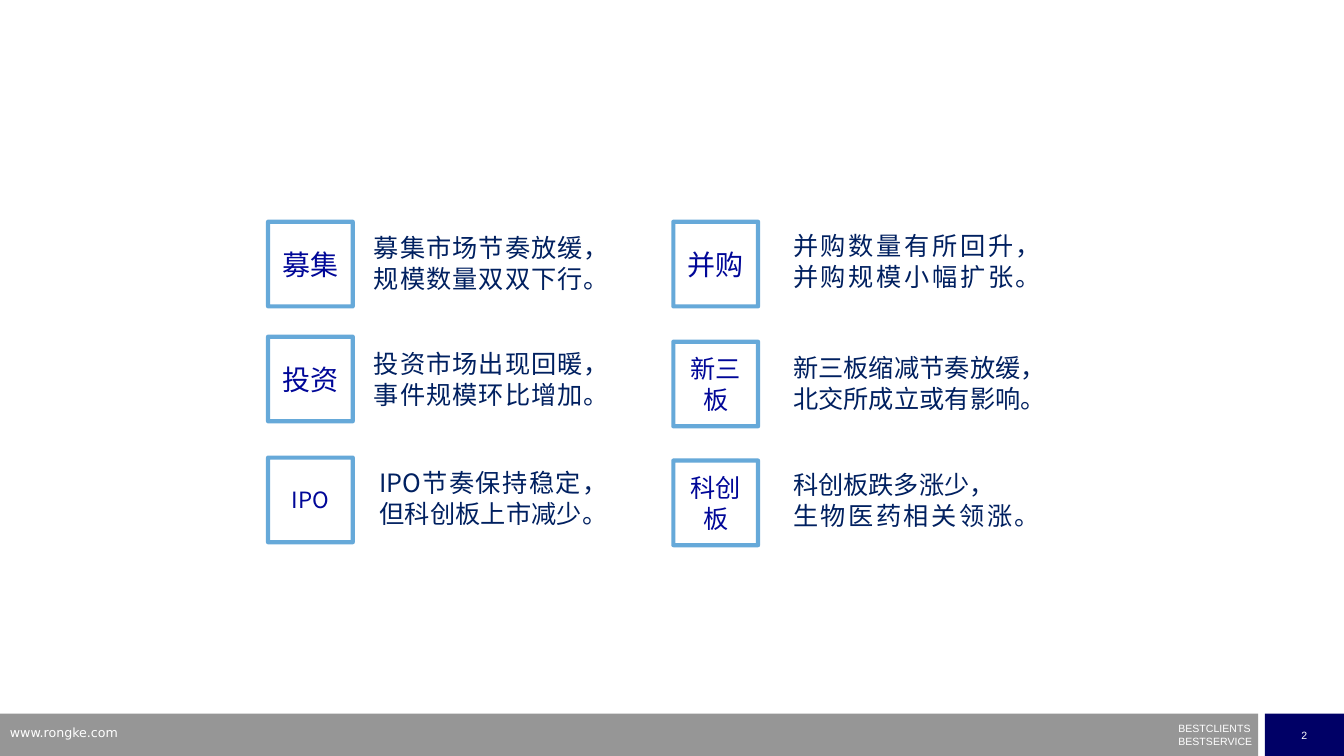
from pptx import Presentation
from pptx.dml.color import RGBColor
from pptx.enum.lang import MSO_LANGUAGE_ID
from pptx.enum.shapes import MSO_SHAPE
from pptx.enum.text import MSO_ANCHOR, PP_ALIGN
from pptx.oxml.ns import qn
from pptx.util import Pt
from lxml.etree import SubElement

HUES = {"grey": "969696", "navy": "000066", "white": "FFFFFF",
        "frame": "0070C0", "label": "000798", "body": "002060"}
SIDE = 60.5  # side of a label square

# Each topic: top, label, label size, text offset (x, y), text width, paragraphs
LEFT = [
    (158.4, "募集", 20, 68.4, 4.3, 164.2, ["募集市场节奏放缓，", "规模数量双双下行。"]),
    (240.5, "投资", 20, 68.4, 5, 164.2, ["投资市场出现回暖，事件规模环比增加。"]),
    (326.9, "IPO", 16, 72.4, 3.6, 159.1, ["IPO节奏保持稳定，", "但科创板上市减少。"]),
]
RIGHT = [
    (158.4, "并购", 20, 78.4, 2.9, 173.5, ["并购数量有所回升，", "并购规模小幅扩张。"]),
    (244.1, "新三板", 18, 78.4, 4.3, 177.1, ["新三板缩减节奏放缓，", "北交所成立或有影响。"]),
    (329, "科创板", 18, 78.4, 2.9, 172.8, ["科创板跌多涨少，", "生物医药相关领涨。"]),
]


def hue(name):
    return RGBColor.from_string(HUES[name])


def write(frame, lines, size, face, color, align=PP_ALIGN.LEFT):
    for i, line in enumerate(lines):
        para = frame.paragraphs[0] if i == 0 else frame.add_paragraph()
        para.alignment = align
        run = para.add_run()
        run.text = line
        font = run.font
        font.size, font.name = Pt(size), face
        font.color.rgb = hue(color)
        if "CJK" in face:
            font.language_id = MSO_LANGUAGE_ID.SIMPLIFIED_CHINESE
            # East Asian typeface
            SubElement(run._r.get_or_add_rPr(), qn("a:ea")).set("typeface", face)


def rect(slide, x, y, w, h, fill=None):
    box = slide.shapes.add_shape(MSO_SHAPE.RECTANGLE, Pt(x), Pt(y), Pt(w), Pt(h))
    box.shadow.inherit = False
    if fill:
        box.fill.solid()
        box.fill.fore_color.rgb = hue(fill)
        box.line.fill.background()
    else:
        box.fill.background()
    box.text_frame.vertical_anchor = MSO_ANCHOR.MIDDLE
    return box


def text(slide, x, y, w, h):
    frame = slide.shapes.add_textbox(Pt(x), Pt(y), Pt(w), Pt(h)).text_frame
    frame.word_wrap = True
    return frame


def topic(slide, x, y, label, size, dx, dy, width, lines):
    # Framed label with a translucent outline
    box = rect(slide, x, y, SIDE, SIDE)
    box.line.width = Pt(3)
    box.line.color.rgb = hue("frame")
    tint = box.line._ln.find(".//" + qn("a:srgbClr"))
    SubElement(tint, qn("a:alpha")).set("val", "60000")
    write(box.text_frame, [label], size, "Noto Sans CJK JP", "label", PP_ALIGN.CENTER)
    # Statement beside it
    frame = text(slide, x + dx, y + dy, width, 51)
    write(frame, lines, 18, "Noto Sans CJK SC", "body", PP_ALIGN.JUSTIFY)


def footer(slide, x, y, w, h):
    rect(slide, x, y, w - 61.4, h, "grey")
    # Page number
    page = rect(slide, x + w - 56.6, y, 56.6, h, "navy").text_frame
    page.word_wrap = False
    write(page, ["2"], 7.5, "Arial", "white", PP_ALIGN.CENTER)
    # Motto
    motto = text(slide, x + w - 118.3, y + 10, 54.7, 14.4)
    motto.margin_left = motto.margin_right = motto.margin_top = motto.margin_bottom = 0
    write(motto, ["BESTCLIENTS", "BESTSERVICE"], 7.5, "Arial", "white")
    for para in motto.paragraphs:
        para.line_spacing = 0.5
    motto.paragraphs[1].space_before = Pt(4.3)
    # Web address
    site = text(slide, x, y + 4.3, 230.4, 18.7)
    write(site, ["www.rongke.com"], 9, "DejaVu Sans", "white")


def main():
    deck = Presentation()
    deck.slide_width, deck.slide_height = Pt(960), Pt(540)
    slide = deck.slides.add_slide(deck.slide_layouts[6])
    footer(slide, 0, 509.8, 960, 30.2)
    for x, topics in ((191.5, LEFT), (481, RIGHT)):
        for item in topics:
            topic(slide, x, *item)
    deck.save("out.pptx")


if __name__ == "__main__":
    main()
